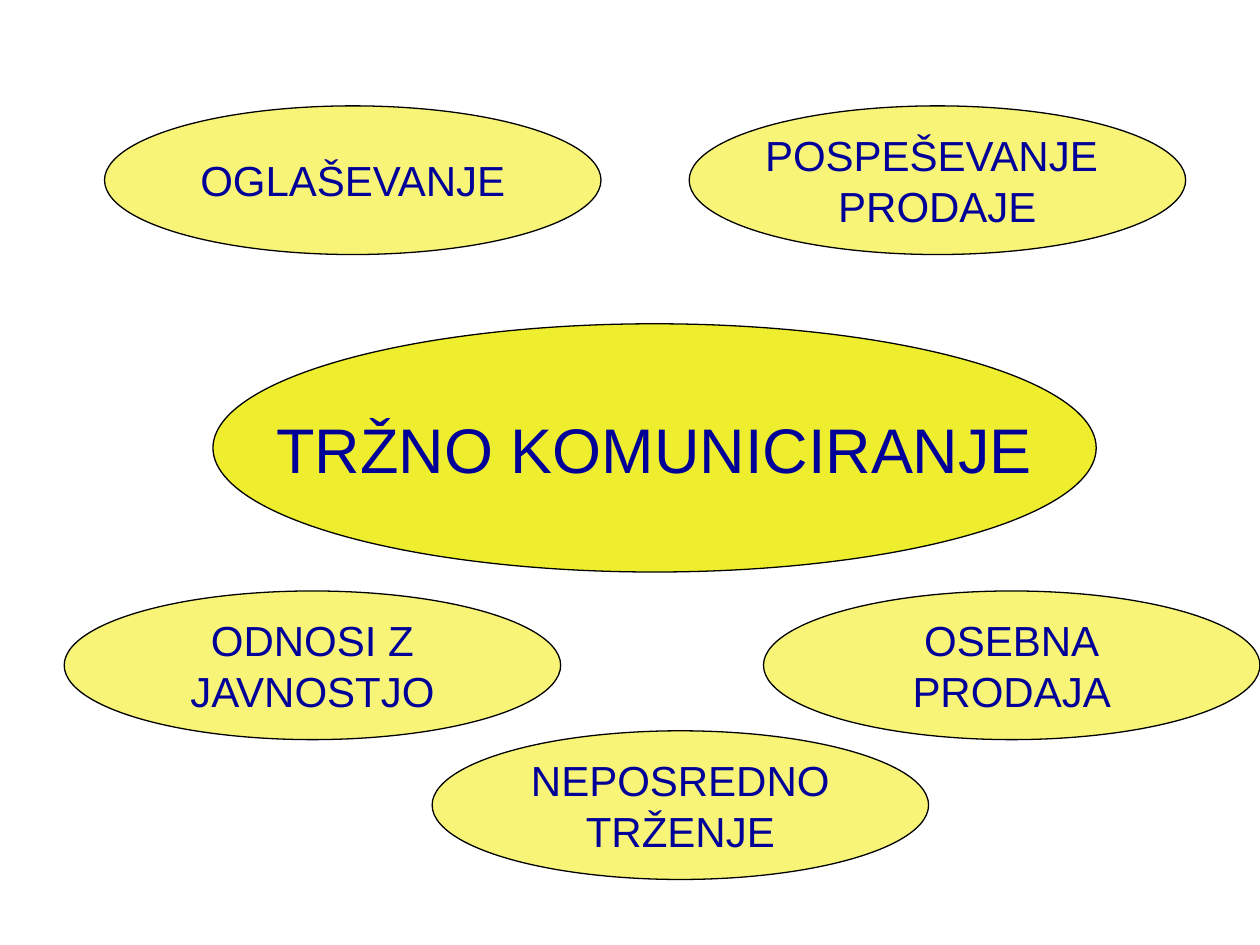
from dataclasses import dataclass

from pptx import Presentation
from pptx.dml.color import RGBColor
from pptx.enum.shapes import MSO_SHAPE
from pptx.enum.text import MSO_ANCHOR, PP_ALIGN
from pptx.slide import Slide
from pptx.util import Inches, Pt

COLORS = {"center": "EEEE2E", "tool": "F7F478", "outline": "000000", "text": "000099"}
FONT = "Arial"
COLUMNS, ROWS = 100, 75
COLUMN = Inches(10) / COLUMNS
ROW = Inches(7.5) / ROWS
UPPER_ROW, LOWER_ROW, BOTTOM_ROW = 8.4, 46.9, 58


@dataclass(frozen=True)
class Bubble:
    text: str
    column: float
    row: float
    columns: float = 39.4
    rows: float = 11.8
    fill: str = "tool"
    font_size: int = 24


BUBBLES = [
    Bubble("TRŽNO KOMUNICIRANJE", 16.9, 25.7, 70.1, 19.7, "center", 36),
    Bubble("OGLAŠEVANJE", 8.3, UPPER_ROW),
    Bubble("POSPEŠEVANJE \nPRODAJE", 54.7, UPPER_ROW),
    Bubble("ODNOSI Z\nJAVNOSTJO", 5.1, LOWER_ROW),
    Bubble("NEPOSREDNO\nTRŽENJE", 34.3, BOTTOM_ROW),
    Bubble("OSEBNA\nPRODAJA", 60.6, LOWER_ROW),
]


def color(name: str) -> RGBColor:
    return RGBColor.from_string(COLORS[name])


def draw_bubble(slide: Slide, bubble: Bubble) -> None:
    shape = slide.shapes.add_shape(
        MSO_SHAPE.OVAL,
        round(bubble.column * COLUMN),
        round(bubble.row * ROW),
        round(bubble.columns * COLUMN),
        round(bubble.rows * ROW),
    )
    shape.shadow.inherit = False
    shape.fill.solid()
    shape.fill.fore_color.rgb = color(bubble.fill)
    shape.line.color.rgb = color("outline")
    shape.line.width = Pt(0.75)

    text_frame = shape.text_frame
    text_frame.text = bubble.text
    text_frame.word_wrap = False
    text_frame.vertical_anchor = MSO_ANCHOR.MIDDLE
    for paragraph in text_frame.paragraphs:
        paragraph.alignment = PP_ALIGN.CENTER
        for run in paragraph.runs:
            run.font.name = FONT
            run.font.size = Pt(bubble.font_size)
            run.font.color.rgb = color("text")


def main() -> None:
    presentation = Presentation()
    presentation.slide_width = round(COLUMNS * COLUMN)
    presentation.slide_height = round(ROWS * ROW)
    slide = presentation.slides.add_slide(presentation.slide_layouts.get_by_name("Blank"))
    for bubble in BUBBLES:
        draw_bubble(slide, bubble)
    presentation.save("out.pptx")


if __name__ == "__main__":
    main()
